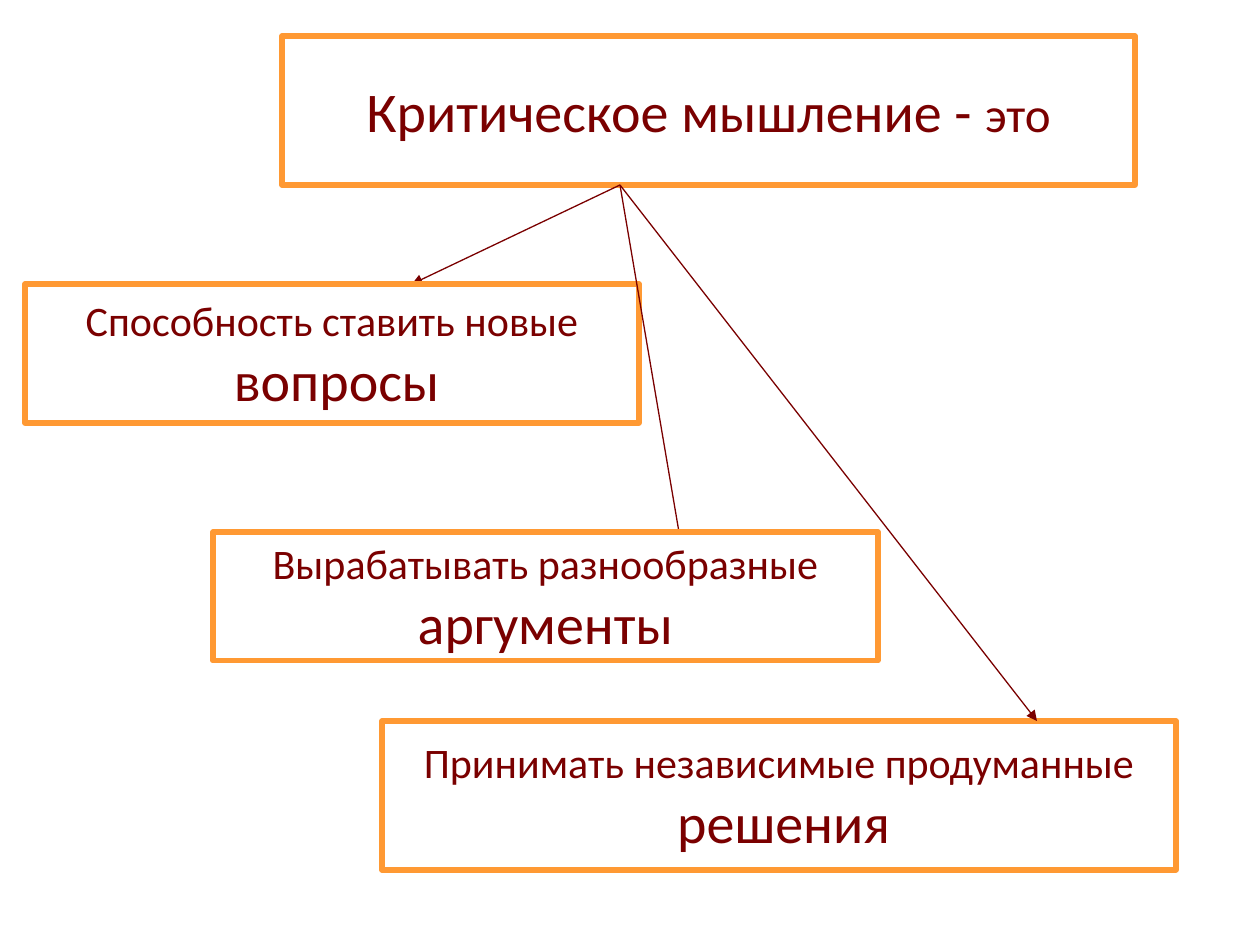
from lxml import etree
from pptx import Presentation
from pptx import util as u
from pptx.dml.color import RGBColor
from pptx.enum import shapes, text
from pptx.oxml.ns import qn

PX = u.Inches(1) / 126
COLORS = {"ink": "7A0000", "border": "FF9933"}


def px(*lengths):
    return [u.Emu(round(n * PX)) for n in lengths]


def add_text(paragraph, wording, size, color="ink", font="Calibri"):
    run = paragraph.add_run()
    run.text = wording
    run.font.size = u.Pt(size)
    run.font.name = font
    run.font.color.rgb = RGBColor.from_string(COLORS[color])


deck = Presentation()
deck.slide_width, deck.slide_height = u.Inches(10), u.Inches(7.5)
slide = deck.slides.add_slide(deck.slide_layouts[6])

# Each idea: box place, lines of (wording, size), arrow end, arrowhead, box above arrow
trunk = (620, 185)
ideas = [
    ((282, 36, 853, 149),
     [[("Критическое мышление - ", 32), ("это", 28)]], None, False, True),
    ((25, 284, 614, 139),
     [[("Способность ставить новые", 24)], [(" ", 24), ("вопросы", 32)]],
     (412, 284), True, True),
    ((382, 721, 794, 149),
     [[("Принимать независимые продуманные", 24)], [(" ", 24), ("решения", 32)]],
     (1037, 721), True, False),
    ((213, 532, 665, 129),
     [[("Вырабатывать разнообразные", 24)], [("аргументы", 32)]],
     (679, 532), False, True),
]

for place, lines, arrow_end, has_head, box_on_top in ideas:
    # Framed idea
    box = slide.shapes.add_shape(shapes.MSO_SHAPE.RECTANGLE, *px(*place))
    box.shadow.inherit = False
    box.fill.background()
    box.line.color.rgb = RGBColor.from_string(COLORS["border"])
    box.line.width = u.Pt(3)
    frame = box.text_frame
    frame.word_wrap = False
    frame.vertical_anchor = text.MSO_ANCHOR.MIDDLE
    for i, line in enumerate(lines):
        paragraph = frame.paragraphs[0] if i == 0 else frame.add_paragraph()
        paragraph.alignment = text.PP_ALIGN.CENTER
        for wording, size in line:
            add_text(paragraph, wording, size)

    # Branch from the heading
    if arrow_end:
        branch = slide.shapes.add_connector(
            shapes.MSO_CONNECTOR.STRAIGHT, *px(*trunk, *arrow_end))
        branch.line.color.rgb = RGBColor.from_string(COLORS["ink"])
        branch.line.width = u.Pt(0.75)
        if has_head:
            etree.SubElement(branch.line._get_or_add_ln(), qn("a:tailEnd"), type="triangle")
        etree.SubElement(branch._element.spPr, qn("a:effectLst"))
        if box_on_top:
            box._element.addprevious(branch._element)

deck.save("out.pptx")
